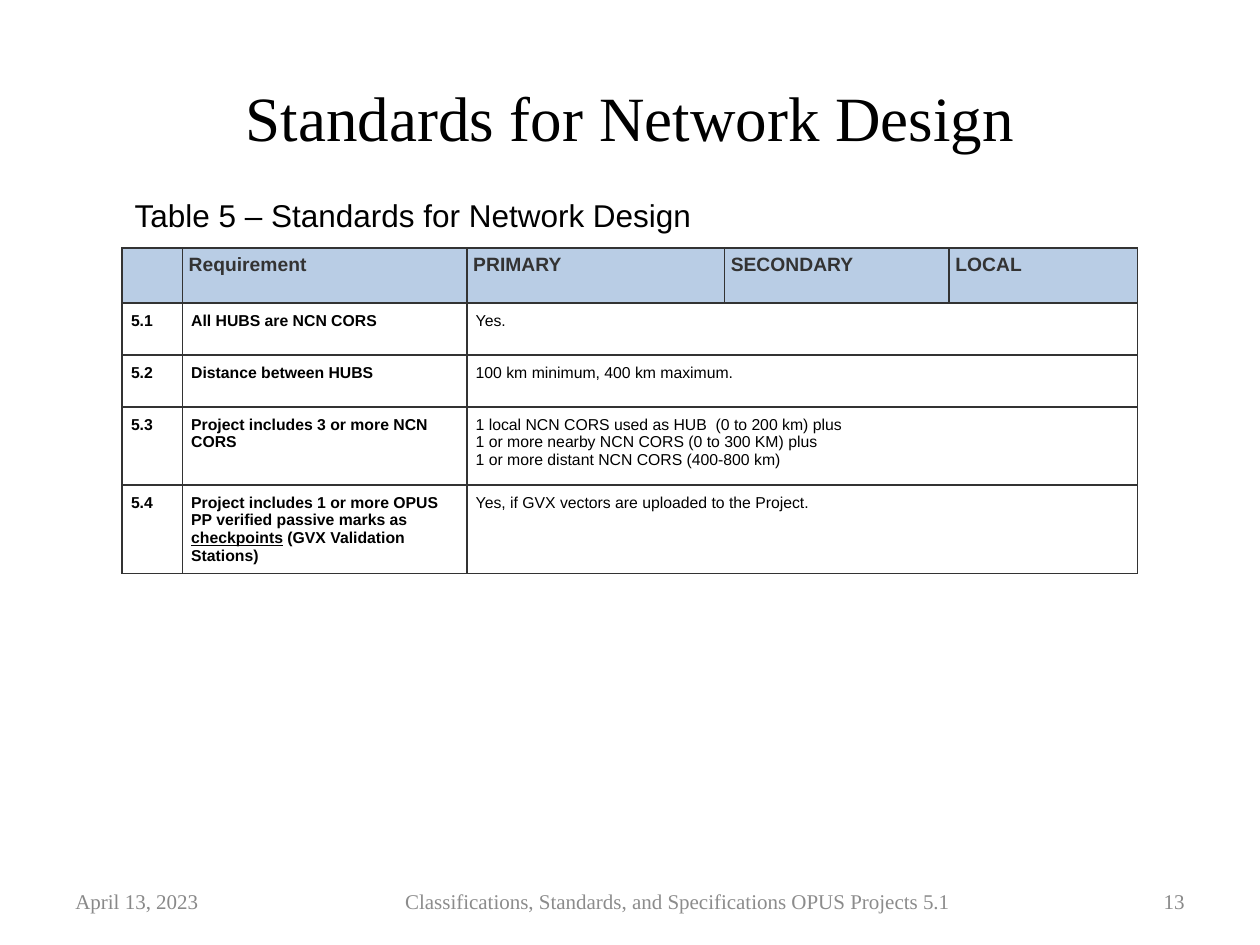
from dataclasses import dataclass

from pptx import Presentation
from pptx.dml.color import RGBColor
from pptx.enum.text import MSO_ANCHOR, PP_ALIGN
from pptx.oxml import parse_xml
from pptx.oxml.ns import nsdecls
from pptx.util import Pt


@dataclass(frozen=True)
class Theme:
    serif: str = "Times New Roman"
    sans: str = "Arial"
    black: str = "000000"
    dark: str = "333333"
    date_gray: str = "898989"
    footer_gray: str = "8C8C8C"
    header_fill: str = "B9CDE5"
    title_size: float = 36
    caption_size: float = 18
    footer_size: float = 12
    header_size: float = 11
    body_size: float = 9
    border_width: float = 1


@dataclass(frozen=True)
class TextStyle:
    font: str
    size: float
    color: str
    bold: bool = False


@dataclass(frozen=True)
class Label:
    text: str
    box: tuple[float, float, float, float]
    style: TextStyle
    align: PP_ALIGN = PP_ALIGN.LEFT
    anchor: MSO_ANCHOR = MSO_ANCHOR.MIDDLE


@dataclass(frozen=True)
class Standard:
    number: str
    requirement: str  # text between underscores is underlined
    rule: str  # one paragraph per line


THEME = Theme()
TITLE = TextStyle(THEME.serif, THEME.title_size, THEME.black)
CAPTION = TextStyle(THEME.sans, THEME.caption_size, THEME.black)
DATE = TextStyle(THEME.serif, THEME.footer_size, THEME.date_gray)
FOOTER = TextStyle(THEME.serif, THEME.footer_size, THEME.footer_gray)
HEADER = TextStyle(THEME.sans, THEME.header_size, THEME.dark, True)
BODY_BOLD = TextStyle(THEME.sans, THEME.body_size, THEME.black, True)
BODY = TextStyle(THEME.sans, THEME.body_size, THEME.black)

TITLE_BOX = (36, 21.6, 648, 90)
TABLE_ORIGIN = (69.84, 141.84)
COLUMN_WIDTHS = (34.4, 162.6, 147.2, 128.4, 107.6)
ROW_HEIGHTS = (31.4, 29.7, 29.7, 44.6, 50.4)
HEADER_INSET, BODY_INSET = 3.6, 5.04

LABELS = [
    Label("April 13, 2023", (36, 500.4, 100.8, 28.8), DATE),
    Label("Classifications, Standards, and Specifications OPUS Projects 5.1",
          (166.3, 500.4, 442.1, 28.8), FOOTER, PP_ALIGN.CENTER),
    Label("13", (627.1, 500.4, 56.9, 28.8), DATE, PP_ALIGN.RIGHT),
    Label("Table 5 – Standards for Network Design",
          (69.84, 108.7, 455, 28.8), CAPTION, anchor=MSO_ANCHOR.TOP),
]
HEADINGS = ("", "Requirement", "PRIMARY", "SECONDARY", "LOCAL")
STANDARDS = [
    Standard("5.1", "All HUBS are NCN CORS", "Yes."),
    Standard("5.2", "Distance between HUBS", "100 km minimum, 400 km maximum."),
    Standard("5.3", "Project includes 3 or more NCN CORS",
             "1 local NCN CORS used as HUB  (0 to 200 km) plus\n"
             "1 or more nearby NCN CORS (0 to 300 KM) plus\n"
             "1 or more distant NCN CORS (400-800 km)"),
    Standard("5.4", "Project includes 1 or more OPUS PP verified passive marks as "
                    "_checkpoints_ (GVX Validation Stations)",
             "Yes, if GVX vectors are uploaded to the Project."),
]


def apply_style(font, style: TextStyle) -> None:
    values = {"name": style.font, "size": Pt(style.size), "bold": style.bold}
    for name, value in values.items():
        setattr(font, name, value)
    font.color.rgb = RGBColor.from_string(style.color)


def write_text(frame, text: str, style: TextStyle, align=PP_ALIGN.LEFT) -> None:
    for index, line in enumerate(text.split("\n")):
        paragraph = frame.paragraphs[0] if index == 0 else frame.add_paragraph()
        paragraph.alignment = align
        for position, part in enumerate(line.split("_")):
            if part:
                run = paragraph.add_run()
                run.text = part
                apply_style(run.font, style)
                if position % 2:
                    run.font.underline = True
        if not line:
            apply_style(paragraph.font, style)


def place(shape, box: tuple[float, float, float, float]) -> None:
    for name, value in zip(("left", "top", "width", "height"), box):
        setattr(shape, name, Pt(value))


def add_label(slide, label: Label) -> None:
    shape = slide.shapes.add_textbox(*map(Pt, label.box))
    frame = shape.text_frame
    frame.word_wrap = True
    frame.vertical_anchor = label.anchor
    write_text(frame, label.text, label.style, label.align)


def format_cell(cell, inset: float, fill: str | None = None) -> None:
    for side in ("left", "right", "top", "bottom"):
        setattr(cell, f"margin_{side}", Pt(inset))
    # Cell borders come before the fill in the cell properties
    properties = cell._tc.get_or_add_tcPr()
    for tag in ("lnL", "lnR", "lnT", "lnB"):
        properties.append(parse_xml(
            f'<a:{tag} {nsdecls("a")} w="{Pt(THEME.border_width)}"><a:solidFill>'
            f'<a:srgbClr val="{THEME.dark}"/></a:solidFill></a:{tag}>'))
    if fill:
        cell.fill.solid()
        cell.fill.fore_color.rgb = RGBColor.from_string(fill)
    else:
        cell.fill.background()


def add_standards_table(slide) -> None:
    table = slide.shapes.add_table(
        len(ROW_HEIGHTS), len(COLUMN_WIDTHS), *map(Pt, TABLE_ORIGIN),
        Pt(sum(COLUMN_WIDTHS)), Pt(sum(ROW_HEIGHTS))).table
    table.first_row = table.horz_banding = False
    for column, width in zip(table.columns, COLUMN_WIDTHS):
        column.width = Pt(width)
    for row, height in zip(table.rows, ROW_HEIGHTS):
        row.height = Pt(height)

    # Header row
    for index, heading in enumerate(HEADINGS):
        cell = table.cell(0, index)
        format_cell(cell, HEADER_INSET, THEME.header_fill)
        write_text(cell.text_frame, heading, HEADER)

    # One row per standard, its rule spanning the last three columns
    for row, standard in enumerate(STANDARDS, start=1):
        for column in range(len(COLUMN_WIDTHS)):
            format_cell(table.cell(row, column), BODY_INSET)
        table.cell(row, 2).merge(table.cell(row, 4))
        contents = ((standard.number, BODY_BOLD),
                    (standard.requirement, BODY_BOLD), (standard.rule, BODY))
        for column, (text, style) in enumerate(contents):
            write_text(table.cell(row, column).text_frame, text, style)


def main() -> None:
    presentation = Presentation()
    presentation.slide_width, presentation.slide_height = Pt(720), Pt(540)
    slide = presentation.slides.add_slide(presentation.slide_layouts[5])

    # Title
    title = slide.shapes.title
    place(title, TITLE_BOX)
    title.text_frame.vertical_anchor = MSO_ANCHOR.MIDDLE
    write_text(title.text_frame, "Standards for Network Design", TITLE, PP_ALIGN.CENTER)

    # Table, its caption and the footer
    add_standards_table(slide)
    for label in LABELS:
        add_label(slide, label)
    presentation.save("out.pptx")


if __name__ == "__main__":
    main()
